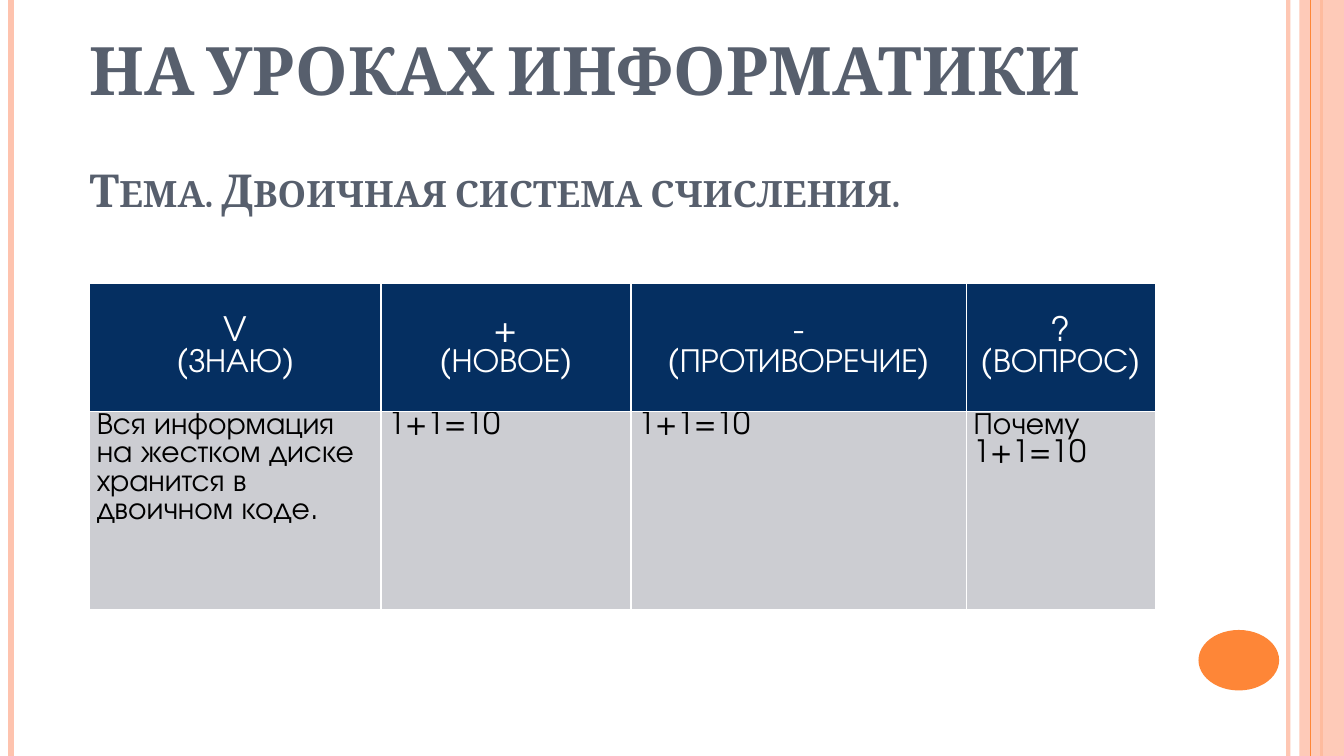
from lxml.etree import SubElement
from pptx import Presentation
from pptx.dml.color import RGBColor
from pptx.enum.shapes import MSO_CONNECTOR as Link, MSO_SHAPE as Form
from pptx.enum.text import MSO_ANCHOR as Anchor, MSO_AUTO_SIZE as Fit, PP_ALIGN as Align
from pptx.oxml import parse_xml
from pptx.oxml.ns import nsdecls, qn
from pptx.util import Emu, Inches, Pt

COLS, ROWS, UNIT = 160, 90, 76200
PEACH, ORANGE, SLATE = "FEC3AE", "FE8637", "575F6D"
NAVY, GREY, WHITE, BLACK = "052F61", "CCCDD2", "FFFFFF", "000000"


def hue(code):
    return RGBColor.from_string(code)


def grid(*cells):
    """Turn counts of grid columns or rows into slide lengths."""
    return [Emu(round(n * UNIT)) for n in cells]


def fade(fill, share):
    """Set the opacity of a solid fill, in percent."""
    tint = fill.find(".//" + qn("a:srgbClr"))
    SubElement(tint, qn("a:alpha")).set("val", str(share * 1000))


class Board:
    head = "Cambria"
    body = "TeX Gyre Adventor"

    def __init__(self, deck):
        self.slide = deck.slides.add_slide(deck.slide_layouts[5])
        self.shapes = self.slide.shapes
        back = self.slide.background.fill
        back.solid()
        back.fore_color.rgb = hue(WHITE)

    def rule(self, x, color, width, alpha=100):
        """Draw an upright line over the full height."""
        line = self.shapes.add_connector(Link.STRAIGHT, *grid(x, 0, x, ROWS))
        line.line.color.rgb = hue(color)
        line.line.width = Pt(width)
        props = line._element.spPr
        SubElement(props, qn("a:effectLst"))
        if alpha < 100:
            fade(props.find(qn("a:ln")), alpha)

    def shape(self, form, box, color, alpha=100):
        item = self.shapes.add_shape(form, *grid(*box))
        item.shadow.inherit = False
        item.fill.solid()
        item.fill.fore_color.rgb = hue(color)
        item.line.fill.background()
        if alpha < 100:
            fade(item._element.spPr.find(qn("a:solidFill")), alpha)

    def run(self, para, text, font, size, color):
        run = para.add_run()
        run.text = text
        run.font.name = font
        run.font.size = Pt(size)
        run.font.color.rgb = hue(color)
        return run

    def title(self, box, lines, gap):
        """Fill the title with (text, size) lines, gap points apart."""
        item = self.shapes.title
        item.left, item.top, item.width, item.height = grid(*box)
        frame = item.text_frame
        frame.auto_size = Fit.NONE
        frame.word_wrap = True
        frame.vertical_anchor = Anchor.BOTTOM
        frame.margin_bottom = Inches(0.58)
        for i, (text, size) in enumerate(lines):
            para = frame.add_paragraph() if i else frame.paragraphs[0]
            para.alignment = Align.LEFT
            para.space_before = Pt(gap if i else 0)
            run = self.run(para, text, self.head, size, SLATE)
            run.font.bold = True
            run._r.get_or_add_rPr().set("cap", "small")

    def cell(self, cell, lines, top):
        cell.fill.solid()
        cell.fill.fore_color.rgb = hue(NAVY if top else GREY)
        cell.margin_left = cell.margin_right = Inches(0.07)
        cell.margin_top = cell.margin_bottom = 0
        cell.vertical_anchor = Anchor.MIDDLE if top else Anchor.TOP
        for i, text in enumerate(lines):
            para = cell.text_frame.add_paragraph() if i else cell.text_frame.paragraphs[0]
            para.alignment = Align.CENTER if top else Align.LEFT
            para.line_spacing = 0.99
            self.run(para, text, self.body, 24 if top else 22, WHITE if top else BLACK)
        props = cell._tc.get_or_add_tcPr()
        for i, side in enumerate("LRTB"):
            props.insert(i, parse_xml(
                f'<a:ln{side} {nsdecls("a")} w="{Pt(0.91)}"><a:solidFill>'
                f'<a:srgbClr val="{WHITE}"/></a:solidFill></a:ln{side}>'))

    def table(self, spot, wide, high, data):
        size = len(high), len(wide)
        table = self.shapes.add_table(*size, *grid(*spot, sum(wide), sum(high))).table
        table.horz_banding = False
        for col, width in zip(table.columns, grid(*wide)):
            col.width = width
        for row, height in zip(table.rows, grid(*high)):
            row.height = height
        for r, row in enumerate(data):
            for c, lines in enumerate(row):
                self.cell(table.cell(r, c), lines, r == 0)


def main():
    deck = Presentation()
    deck.slide_width, deck.slide_height = grid(COLS, ROWS)
    board = Board(deck)
    board.rule(153.36, PEACH, 3, 93)
    board.rule(1.32, PEACH, 4.5)
    board.rule(157.32, ORANGE, 1.5)
    board.shape(Form.RECTANGLE, (154.68, 0, 5.32, ROWS), PEACH, 87)
    board.rule(156, ORANGE, 0.75)
    board.shape(Form.OVAL, (142.68, 75, 9.6, 7.2), ORANGE)
    board.title((9.48, 3.84, 141, 28.92), [
        ("НА УРОКАХ ИНФОРМАТИКИ", 47.7),
        ("Тема. Двоичная система счисления.", 32.4),
    ], 38)
    board.table((10.68, 33.8), (34.68, 29.76, 39.96, 22.44), (15.24, 23.52), [
        [("V", "(ЗНАЮ)"), ("+", "(НОВОЕ)"), ("-", "(ПРОТИВОРЕЧИЕ)"), ("?", "(ВОПРОС)")],
        [("Вся информация на жестком диске хранится в двоичном коде.",),
         ("1+1=10",), ("1+1=10",), ("Почему 1+1=10",)],
    ])
    deck.save("out.pptx")


if __name__ == "__main__":
    main()
